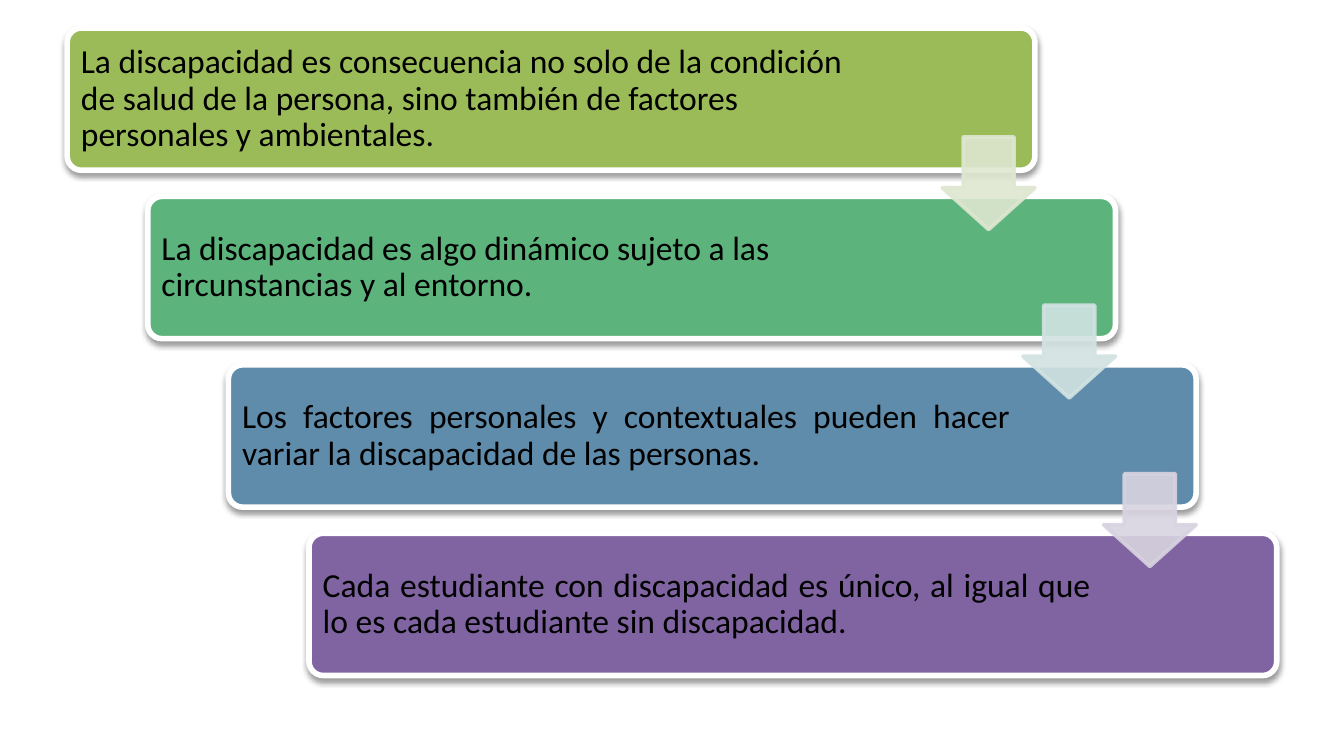
from dataclasses import dataclass

from lxml import etree
from pptx import Presentation
from pptx import util as u
from pptx.dml.color import RGBColor
from pptx.enum import shapes, text
from pptx.oxml import ns


@dataclass(frozen=True)
class Theme:
    steps: tuple = ("9BBB59", "5CB37C", "608CAB", "8064A2")
    arrows: tuple = ("DEE7D1", "D2E3E2", "D8D3E0")
    border: str = "FFFFFF"
    ink: str = "000000"
    font: str = "Calibri"
    size: u.Pt = u.Pt(18)
    border_width: u.Pt = u.Pt(3)
    arrow_width: u.Pt = u.Pt(2)


THEME = Theme()
LEFT, RIGHT = text.PP_ALIGN.LEFT, text.PP_ALIGN.JUSTIFY
STATEMENTS = (
    ("La discapacidad es consecuencia no solo de la condición de salud de la "
     "persona, sino también de factores personales y ambientales.", LEFT),
    ("La discapacidad es algo dinámico sujeto a las circunstancias y al entorno.", LEFT),
    ("Los factores personales y contextuales pueden hacer variar la discapacidad "
     "de las personas.", RIGHT),
    ("Cada estudiante con discapacidad es único, al igual que lo es cada "
     "estudiante sin discapacidad.", RIGHT),
)


def rgb(value):
    return RGBColor.from_string(value)


def set_alpha(color, percent):
    etree.SubElement(color, ns.qn("a:alpha"), val=str(percent * 1000))


def paint(shape, fill, line, width):
    shape.shadow.inherit = False
    shape.fill.solid()
    shape.fill.fore_color.rgb = rgb(fill)
    shape.line.color.rgb = rgb(line)
    shape.line.width = width


def cast_shadow(shape):
    effects = shape.element.spPr.find(ns.qn("a:effectLst"))
    shadow = etree.SubElement(
        effects, ns.qn("a:outerShdw"), blurRad="40000", dist="20000",
        dir="5400000", rotWithShape="0")
    color = etree.SubElement(shadow, ns.qn("a:srgbClr"), val=THEME.ink)
    set_alpha(color, 38)


def add_statement(canvas, box, wording, alignment):
    left, top, width, height = box
    margin = u.Cm(0.08)
    label = canvas.add_textbox(
        left + margin, top + margin, u.Cm(14.88), height - 2 * margin)
    frame = label.text_frame
    frame.word_wrap = True
    frame.vertical_anchor = text.MSO_ANCHOR.MIDDLE
    inset = u.Cm(0.18)
    frame.margin_left = frame.margin_right = inset
    frame.margin_top = frame.margin_bottom = inset
    paragraph = frame.paragraphs[0]
    paragraph.alignment = alignment
    paragraph.line_spacing = 0.9
    run = paragraph.add_run()
    run.text = wording
    run.font.name = THEME.font
    run.font.size = THEME.size
    run.font.color.rgb = rgb(THEME.ink)


def add_step(canvas, box, color, wording, alignment):
    panel = canvas.add_shape(shapes.MSO_SHAPE.ROUNDED_RECTANGLE, *box)
    panel.adjustments[0] = 0.1
    paint(panel, color, THEME.border, THEME.border_width)
    cast_shadow(panel)
    add_statement(canvas, box, wording, alignment)


def add_step_arrow(canvas, box, color):
    left, top, width, height = box
    side = u.Cm(1.75)
    arrow = canvas.add_shape(
        shapes.MSO_SHAPE.DOWN_ARROW, left + width - side,
        top + u.Cm(2.06), side, side)
    arrow.adjustments[0] = 0.55
    arrow.adjustments[1] = 0.45
    paint(arrow, color, color, THEME.arrow_width)
    for tone in arrow.element.spPr.iter(ns.qn("a:srgbClr")):
        set_alpha(tone, 90)


def add_staircase(slide, box):
    left, top, width, height = box
    step_width, step_height = u.Cm(18.29), u.Cm(2.69)
    gaps = len(STATEMENTS) - 1
    shift = (width - step_width) // gaps
    drop = (height - step_height) // gaps
    boxes = [(left + i * shift, top + i * drop, step_width, step_height)
             for i in range(len(STATEMENTS))]
    canvas = slide.shapes.add_group_shape().shapes
    for step_box, color, statement in zip(boxes, THEME.steps, STATEMENTS):
        add_step(canvas, step_box, color, *statement)
    for step_box, color in zip(boxes, THEME.arrows):
        add_step_arrow(canvas, step_box, color)


def main():
    deck = Presentation()
    deck.slide_width, deck.slide_height = u.Cm(25.4), u.Cm(14.29)
    slide = deck.slides.add_slide(deck.slide_layouts[6])
    add_staircase(slide, (u.Cm(1.27), u.Cm(0.53), u.Cm(22.86), u.Cm(12.24)))
    deck.save("out.pptx")


if __name__ == "__main__":
    main()
